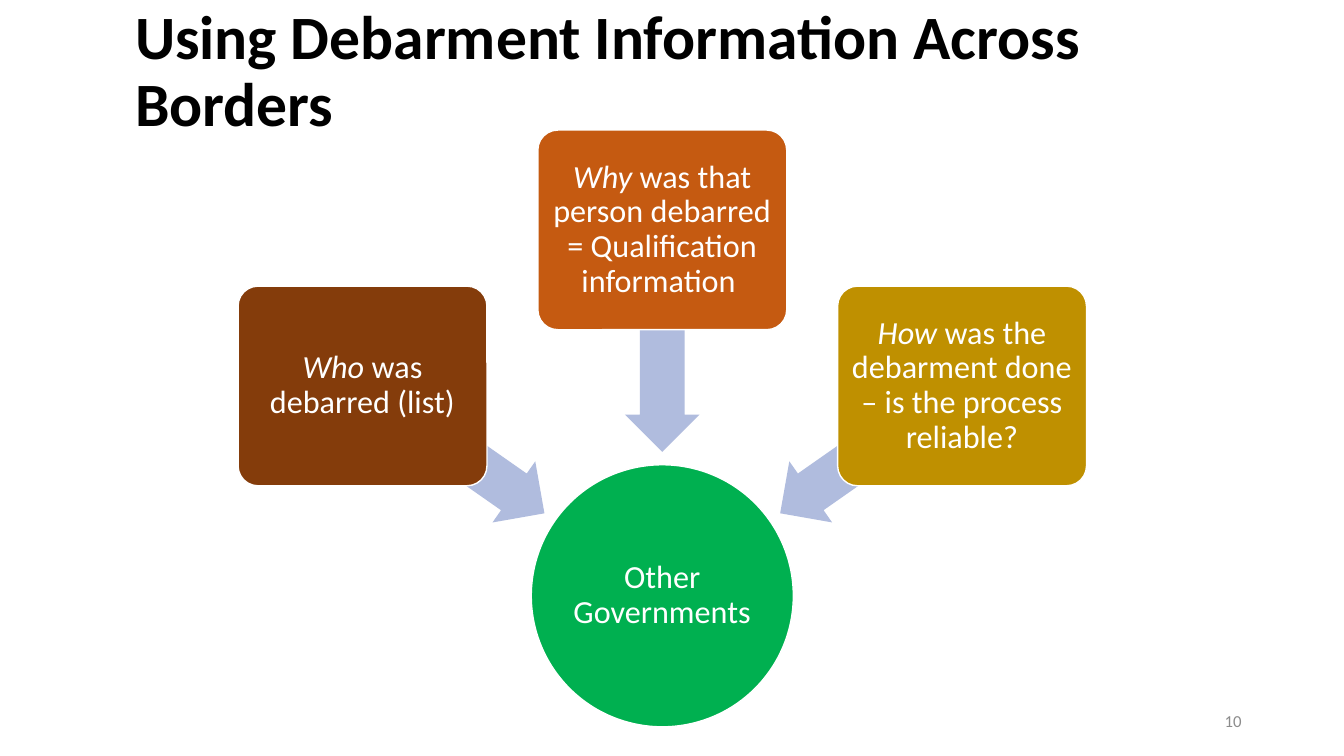
from math import cos, radians, sin

from pptx import Presentation
from pptx.dml.color import RGBColor
from pptx.enum.shapes import MSO_SHAPE as Preset
from pptx.enum.text import MSO_ANCHOR as Anchor, MSO_AUTO_SIZE as AutoSize, PP_ALIGN as Align
from pptx.util import Pt

FONT = "Calibri"
COLOURS = {
    "title": "000000",
    "white": "FFFFFF",
    "number": "8C8C8C",
    "hub": "00B050",
    "arrow": "B0BCDE",
    "who": "843C0B",
    "why": "C55A11",
    "how": "BF9000",
}
# Angle around the hub, colour, question word, rest of the question
QUESTIONS = [
    (215, "who", "Who ", "was debarred (list)"),
    (270, "why", "Why ", "was that person debarred = Qualification information "),
    (325, "how", "How ", "was the debarment done – is the process reliable?"),
]
HUB_SIZE = 187.2
ARROW_SIZE = (158.4, 53.3)
ARROW_DISTANCE = 182
QUESTION_SIZE = (177.8, 142.6)
QUESTION_DISTANCE = 261.4


def colour(name):
    return RGBColor.from_string(COLOURS[name])


def write(shape, runs, size, colour_name, align, spacing=0.9, inset=None, bold=False):
    """Fill the shape with one paragraph of (text, italic) runs."""
    frame = shape.text_frame
    frame.word_wrap = True
    frame.auto_size = AutoSize.NONE
    frame.vertical_anchor = Anchor.MIDDLE
    if inset is not None:
        frame.margin_left = frame.margin_right = Pt(inset)
        frame.margin_top = frame.margin_bottom = Pt(inset)
    paragraph = frame.paragraphs[0]
    paragraph.alignment = align
    paragraph.line_spacing = spacing
    for text, italic in runs:
        run = paragraph.add_run()
        run.text = text
        run.font.name = FONT
        run.font.size = Pt(size)
        run.font.bold = bold
        run.font.italic = italic
        run.font.color.rgb = colour(colour_name)


def add_centred(slide, preset, centre, size, fill, outlined=True):
    (x, y), (width, height) = centre, size
    shape = slide.shapes.add_shape(
        preset, Pt(x - width / 2), Pt(y - height / 2), Pt(width), Pt(height))
    shape.shadow.inherit = False
    shape.fill.solid()
    shape.fill.fore_color.rgb = colour(fill)
    if outlined:
        shape.line.color.rgb = colour("white")
        shape.line.width = Pt(1)
    else:
        shape.line.fill.background()
    return shape


def add_title(slide, left, top, width, height):
    title = slide.shapes.title
    title.left, title.top, title.width, title.height = map(Pt, (left, top, width, height))
    write(title, [("Using Debarment Information Across Borders", False)],
          44, "title", Align.LEFT, bold=True)


def add_converging_diagram(slide, left, top, width, height):
    """Place the hub at the bottom centre of the box, with questions pointing at it."""
    hub_x, hub_y = left + width / 2, top + height - HUB_SIZE / 2

    def around_hub(angle, distance):
        return (hub_x + distance * cos(radians(angle)),
                hub_y + distance * sin(radians(angle)))

    hub = add_centred(slide, Preset.OVAL, (hub_x, hub_y), (HUB_SIZE, HUB_SIZE), "hub")
    write(hub, [("Other Governments", False)], 23, "white", Align.CENTER, inset=1.4)

    for angle, fill, word, rest in QUESTIONS:
        arrow = add_centred(slide, Preset.LEFT_ARROW, around_hub(angle, ARROW_DISTANCE),
                            ARROW_SIZE, "arrow", outlined=False)
        arrow.adjustments[0], arrow.adjustments[1] = 0.6, 0.5
        arrow.rotation = angle

        question = add_centred(slide, Preset.ROUNDED_RECTANGLE,
                               around_hub(angle, QUESTION_DISTANCE), QUESTION_SIZE, fill)
        question.adjustments[0] = 0.1
        write(question, [(word, True), (rest, False)], 23, "white", Align.CENTER, inset=3.6)


def add_slide_number(slide, left, top, width, height):
    number = slide.shapes.add_textbox(Pt(left), Pt(top), Pt(width), Pt(height))
    write(number, [("10", False)], 12, "number", Align.RIGHT, spacing=1.0)


def main():
    presentation = Presentation()
    presentation.slide_width, presentation.slide_height = Pt(960), Pt(540)
    slide = presentation.slides.add_slide(presentation.slide_layouts[5])
    add_title(slide, 89.3, 0, 828, 104.4)
    add_converging_diagram(slide, 170, 93, 606.2, 426.2)
    add_slide_number(slide, 678, 500.5, 216, 28.8)
    presentation.save("out.pptx")


if __name__ == "__main__":
    main()
